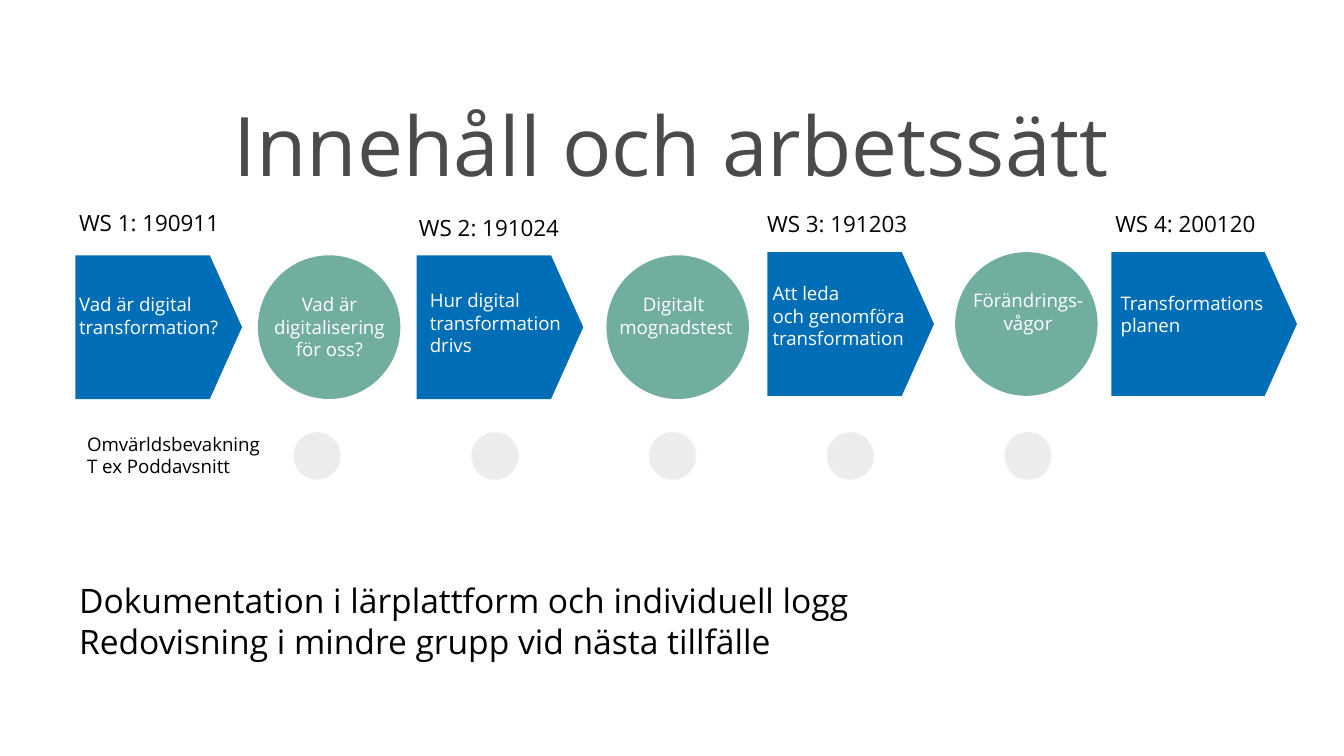
import copy
from dataclasses import dataclass

import pptx
import pptx.dml.color
import pptx.enum.dml
import pptx.enum.shapes
import pptx.enum.text
import pptx.oxml.ns
import pptx.util

Pt = pptx.util.Pt
SHAPE = pptx.enum.shapes.MSO_SHAPE
ALIGN = pptx.enum.text.PP_ALIGN
ANCHOR = pptx.enum.text.MSO_ANCHOR
FONT = "Open Sans"
COLORS = {
    "title": "4B4B4B",
    "text": "000000",
    "on_fill": "FFFFFF",
    "workshop": "006EB6",
    "between": "72AE9F",
    "dot": "ECECEC",
}


@dataclass
class Box:
    x: float
    y: float
    w: float
    h: float


@dataclass
class Step:
    shape: Box
    label: Box
    text: str


@dataclass
class Workshop(Step):
    heading: str
    heading_box: Box


WORKSHOPS = [
    Workshop(Box(40.4, 136.8, 89.3, 77), Box(35.3, 149.8, 99.4, 51),
             "Vad är digital \ntransformation?",
             "WS 1: 190911", Box(35.3, 105.1, 108, 31)),
    Workshop(Box(223.2, 136.8, 89.3, 77), Box(223.2, 147.6, 89.3, 40.3),
             "Hur digital \ntransformation \ndrivs",
             "WS 2: 191024", Box(217.4, 107.3, 125.3, 35.3)),
    Workshop(Box(411.1, 135.1, 89.3, 77), Box(406.8, 144, 99.4, 56.9),
             "Att leda \noch genomföra \ntransformation",
             "WS 3: 191203", Box(403.9, 105.6, 112.3, 35.3)),
    Workshop(Box(595.4, 135.1, 99.4, 77), Box(593.3, 149, 95.8, 35.3),
             "Transformationsplanen",
             "WS 4: 200120", Box(590.4, 105.6, 116.6, 35.3)),
]
BETWEEN = [
    Step(Box(138.2, 136.8, 76.3, 77), Box(131.8, 149.8, 89.3, 51),
         "Vad är digitalisering för oss?"),
    Step(Box(324.9, 136.8, 76.3, 77), Box(317.5, 149.8, 89.3, 51),
         "Digitalt \nmognadstest"),
    Step(Box(511.7, 135.1, 76.3, 77), Box(512.6, 147.6, 76.3, 40.3),
         "Förändrings-vågor"),
]
DOT = Box(157.5, 231.8, 24.8, 25)
DOT_STEP = 95.2
DOT_COUNT = 5


def rgb(name: str) -> pptx.dml.color.RGBColor:
    return pptx.dml.color.RGBColor.from_string(COLORS[name])


def place(box: Box) -> tuple:
    return Pt(box.x), Pt(box.y), Pt(box.w), Pt(box.h)


def add_text(s, box: Box, *paragraphs: str, size: float = 10, color: str = "text",
             align=ALIGN.LEFT, anchor=ANCHOR.TOP, inset: float = 7.2) -> None:
    tf = s.shapes.add_textbox(*place(box)).text_frame
    tf.word_wrap = True
    tf.vertical_anchor = anchor
    tf.margin_left = tf.margin_right = Pt(7.2)
    tf.margin_top = tf.margin_bottom = Pt(inset)
    for i, text in enumerate(paragraphs):
        p = tf.add_paragraph() if i else tf.paragraphs[0]
        p.alignment = align
        p.text = text
        for r in p.runs:
            r.font.size = Pt(size)
            r.font.name = FONT
            r.font.color.rgb = rgb(color)
        for br in p._p.findall(pptx.oxml.ns.qn("a:br")):
            br.append(copy.deepcopy(p.runs[0]._r.rPr))


def add_figure(s, kind: SHAPE, box: Box, color: str):
    sp = s.shapes.add_shape(kind, *place(box))
    sp.shadow.inherit = False
    sp.fill.solid()
    sp.fill.fore_color.rgb = rgb(color)
    sp.line.fill.background()
    return sp


def add_workshop(s, ws: Workshop) -> None:
    sp = add_figure(s, SHAPE.PENTAGON, ws.shape, "workshop")
    sp.adjustments[0] = 0.224
    add_text(s, ws.label, ws.text, color="on_fill")
    add_text(s, ws.heading_box, ws.heading, size=12)


def add_between(s, step: Step) -> None:
    add_figure(s, SHAPE.OVAL, step.shape, "between")
    add_text(s, step.label, *step.text.split("\n"), color="on_fill", align=ALIGN.CENTER)


def add_dot(s, index: int) -> None:
    sp = add_figure(s, SHAPE.OVAL, Box(DOT.x + index * DOT_STEP, DOT.y, DOT.w, DOT.h), "dot")
    sp.line.color.rgb = rgb("dot")
    sp.line.width = Pt(0.75)
    sp.line.dash_style = pptx.enum.dml.MSO_LINE.ROUND_DOT


def main() -> None:
    prs = pptx.Presentation()
    prs.slide_width, prs.slide_height = Pt(720), Pt(405)
    s = prs.slides.add_slide(prs.slide_layouts[6])
    add_text(s, Box(36, 43.2, 648, 67.7), "Innehåll och arbetssätt", size=44,
             color="title", align=ALIGN.CENTER, anchor=ANCHOR.MIDDLE, inset=3.6)
    for ws in WORKSHOPS:
        add_workshop(s, ws)
    for step in BETWEEN:
        add_between(s, step)
    for index in range(DOT_COUNT):
        add_dot(s, index)
    add_text(s, Box(39.6, 224.6, 116.6, 51), "Omvärldsbevakning", "T ex Poddavsnitt")
    add_text(s, Box(35.3, 307.4, 465.1, 58.3),
             "Dokumentation i lärplattform och individuell logg",
             "Redovisning i mindre grupp vid nästa tillfälle", size=18, inset=3.6)
    prs.save("out.pptx")


if __name__ == "__main__":
    main()
